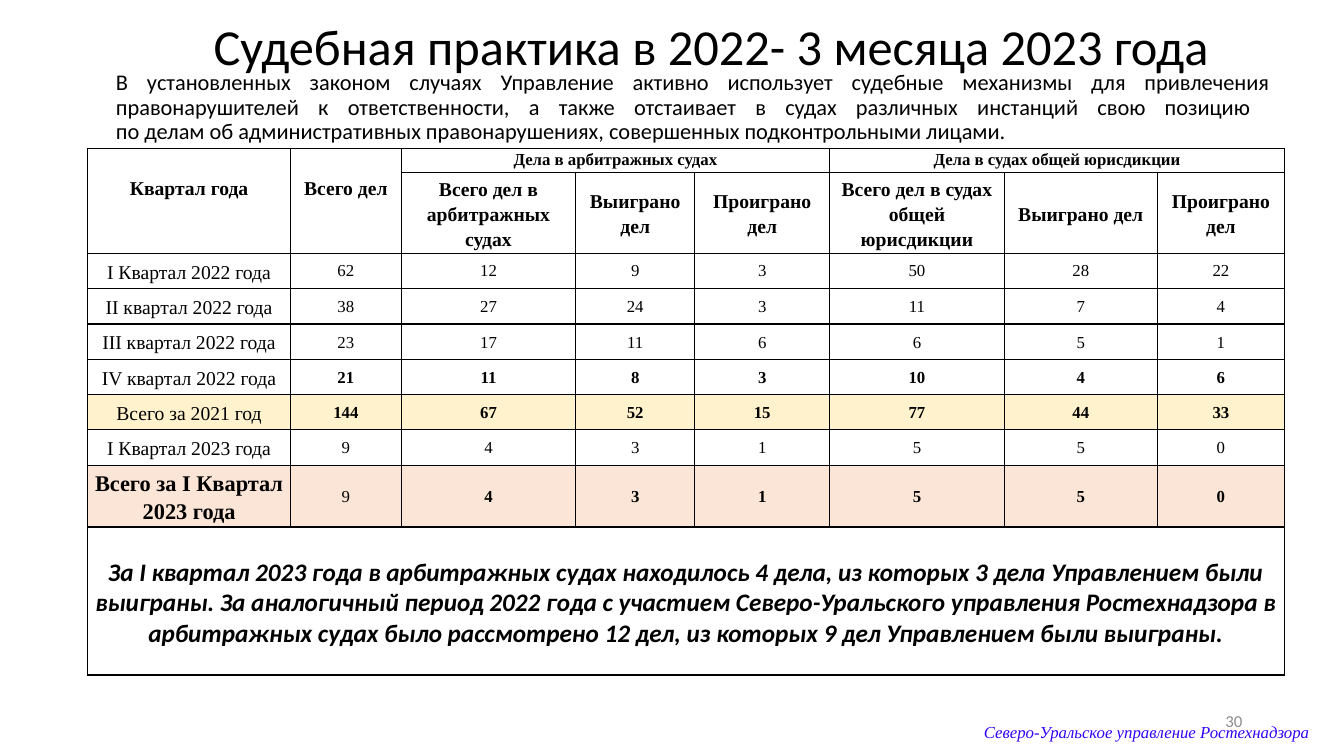
from dataclasses import dataclass

from lxml import etree
from pptx import Presentation
from pptx.dml.color import RGBColor
from pptx.enum.text import MSO_ANCHOR, MSO_AUTO_SIZE, PP_ALIGN
from pptx.oxml.ns import qn
from pptx.util import Inches, Pt

LEFT, CENTER, RIGHT, JUSTIFY = PP_ALIGN.LEFT, PP_ALIGN.CENTER, PP_ALIGN.RIGHT, PP_ALIGN.JUSTIFY
TOP, MIDDLE = MSO_ANCHOR.TOP, MSO_ANCHOR.MIDDLE


@dataclass(frozen=True)
class Theme:
    sans: str = "Calibri"
    serif: str = "Times New Roman"
    ink: str = "000000"
    muted: str = "8C8C8C"
    footer: str = "3103F7"
    year_fill: str = "FFF2CC"
    quarter_fill: str = "FBE5D6"
    title_size: int = 36
    summary_size: int = 18
    body_size: int = 16
    label_size: int = 14
    value_size: int = 12
    border: int = 1


THEME = Theme()

# Content
TITLE = "Судебная практика в 2022- 3 месяца 2023 года"
INTRO = [
    "В установленных законом случаях Управление активно использует судебные механизмы "
    "для привлечения правонарушителей к ответственности, а также отстаивает в судах "
    "различных инстанций свою позицию ",
    "по делам об административных правонарушениях, совершенных подконтрольными лицами.",
]
PAGE_NUMBER = "30"
FOOTER = "Северо-Уральское управление Ростехнадзора"
TALL_HEADERS = ["Квартал года", "Всего дел"]
GROUPS = [
    ("Дела в арбитражных судах",
     ["Всего дел в арбитражных судах", "Выиграно дел", "Проиграно дел"]),
    ("Дела в судах общей юрисдикции",
     ["Всего дел в судах общей юрисдикции", "Выиграно дел", "Проиграно дел"]),
]
# Label, values, number of plain values before the bold ones, line spacing
QUARTERS = [
    ("I Квартал 2022 года", [62, 12, 9, 3, 50, 28, 22], 7, 1.0),
    ("II квартал 2022 года", [38, 27, 24, 3, 11, 7, 4], 7, 1.0),
    ("III квартал 2022 года", [23, 17, 11, 6, 6, 5, 1], 7, 1.15),
    ("IV квартал 2022 года", [21, 11, 8, 3, 10, 4, 6], 0, 1.06),
    ("Всего за 2021 год", [144, 67, 52, 15, 77, 44, 33], 0, 1.06),
    ("I Квартал 2023 года", [9, 4, 3, 1, 5, 5, 0], 7, 1.0),
    ("Всего за I Квартал 2023 года", [9, 4, 3, 1, 5, 5, 0], 1, 1.06),
]
YEAR_TOTAL, QUARTER_TOTAL = 4, 6
SUMMARY = (
    "За I квартал 2023 года в арбитражных судах находилось 4 дела, из которых 3 дела "
    "Управлением были выиграны. За аналогичный период 2022 года с участием "
    "Северо-Уральского управления Ростехнадзора в арбитражных судах было рассмотрено "
    "12 дел, из которых 9 дел Управлением были выиграны."
)

# Geometry: boxes in percent of the slide, table grid in inches
SLIDE_WIDTH, SLIDE_HEIGHT = Inches(13.33), Inches(7.5)
TITLE_BOX = (10.43, 1.73, 85, 9.6)
INTRO_BOX = (7.88, 8.8, 87.4, 12.53)
NUMBER_BOX = (70.67, 92.67, 22.5, 5.33)
FOOTER_BOX = (72.47, 93.47, 26.4, 6.67)
TABLE_BOX = (6.53, 19.6, 89.05, 68.67)
COLUMNS = [2.01, 1.1, 1.73, 1.18, 1.34, 1.73, 1.52, 1.26]
ROWS = [0.24, 0.78] + [0.35] * 6 + [0.56, 1.47]
FIRST_QUARTER_ROW = 2


def place(box):
    left, top, width, height = (share / 100 for share in box)
    return (int(SLIDE_WIDTH * left), int(SLIDE_HEIGHT * top),
            int(SLIDE_WIDTH * width), int(SLIDE_HEIGHT * height))


def write(frame, lines, size, font, color=THEME.ink, align=CENTER, spacing=1.0,
          bold=False, italic=False):
    paragraph = frame.paragraphs[0]
    paragraph.alignment, paragraph.line_spacing = align, spacing
    paragraph.space_before = paragraph.space_after = Pt(0)
    for index, line in enumerate(lines):
        if index:
            paragraph.add_line_break()
        run = paragraph.add_run()
        run.text = line
        run.font.size, run.font.name = Pt(size), font
        run.font.bold, run.font.italic = bold, italic
        run.font.color.rgb = RGBColor.from_string(color)
    return paragraph


def fill_placeholder(shape, box, anchor):
    shape.left, shape.top, shape.width, shape.height = place(box)
    frame = shape.text_frame
    frame.word_wrap, frame.vertical_anchor = True, anchor
    frame.auto_size = MSO_AUTO_SIZE.NONE
    return frame


def add_label(slide, box, text, font, color, align, italic=False):
    frame = slide.shapes.add_textbox(*place(box)).text_frame
    frame.word_wrap, frame.vertical_anchor = True, MIDDLE
    write(frame, [text], THEME.value_size, font, color, align, italic=italic)


def outline(cell):
    properties = cell._tc.get_or_add_tcPr()
    for side in ("lnL", "lnR", "lnT", "lnB"):
        line = etree.SubElement(properties, qn("a:" + side), w=str(Pt(THEME.border)))
        solid = etree.SubElement(line, qn("a:solidFill"))
        etree.SubElement(solid, qn("a:srgbClr"), val=THEME.ink)


def fill_cell(cell, text, size, font=THEME.serif, anchor=MIDDLE, top=0, side=0.05, **style):
    cell.vertical_anchor = anchor
    cell.margin_left = cell.margin_right = Inches(side)
    cell.margin_top = Inches(top)
    write(cell.text_frame, [text], size, font, **style)


def build_table(slide):
    table = slide.shapes.add_table(len(ROWS), len(COLUMNS), *place(TABLE_BOX)).table
    table.first_row = table.horz_banding = False
    for column, width in zip(table.columns, COLUMNS):
        column.width = Inches(width)
    for row, height in zip(table.rows, ROWS):
        row.height = Inches(height)

    # Borders and fills
    fills = {FIRST_QUARTER_ROW + YEAR_TOTAL: THEME.year_fill,
             FIRST_QUARTER_ROW + QUARTER_TOTAL: THEME.quarter_fill}
    for row_index, row in enumerate(table.rows):
        for cell in row.cells:
            outline(cell)
            cell.margin_top = cell.margin_bottom = 0
            if row_index in fills:
                cell.fill.solid()
                cell.fill.fore_color.rgb = RGBColor.from_string(fills[row_index])
            else:
                cell.fill.background()

    # Two header rows
    header = {"bold": True, "spacing": 1.15}
    for column, text in enumerate(TALL_HEADERS):
        cell = table.cell(0, column)
        cell.merge(table.cell(1, column))
        fill_cell(cell, text, THEME.label_size, anchor=TOP, top=0.26, **header)
    column = len(TALL_HEADERS)
    for group, names in GROUPS:
        cell = table.cell(0, column)
        cell.merge(table.cell(0, column + len(names) - 1))
        fill_cell(cell, group, THEME.value_size, anchor=TOP, **header)
        for name in names:
            fill_cell(table.cell(1, column), name, THEME.label_size, **header)
            column += 1

    # Quarters and totals
    for index, (label, values, plain, spacing) in enumerate(QUARTERS):
        row = FIRST_QUARTER_ROW + index
        total = index == QUARTER_TOTAL
        fill_cell(table.cell(row, 0), label, THEME.body_size if total else THEME.label_size,
                  spacing=1.15, bold=total)
        for position, value in enumerate(values):
            fill_cell(table.cell(row, position + 1), str(value), THEME.value_size,
                      side=0.07, spacing=spacing, bold=position >= plain)

    # Summary across the whole width
    last = len(ROWS) - 1
    cell = table.cell(last, 0)
    cell.merge(table.cell(last, len(COLUMNS) - 1))
    fill_cell(cell, SUMMARY, THEME.summary_size, THEME.sans, TOP, top=0.3,
              bold=True, italic=True)


def main():
    presentation = Presentation()
    presentation.slide_width, presentation.slide_height = SLIDE_WIDTH, SLIDE_HEIGHT
    slide = presentation.slides.add_slide(presentation.slide_layouts[1])

    # Title and introduction
    title, body = slide.placeholders
    write(fill_placeholder(title, TITLE_BOX, MIDDLE), [TITLE], THEME.title_size,
          THEME.sans, spacing=0.9)
    paragraph = write(fill_placeholder(body, INTRO_BOX, TOP), INTRO, THEME.body_size,
                      THEME.sans, align=JUSTIFY, spacing=0.9)
    properties = paragraph._p.get_or_add_pPr()
    properties.set("marL", "0")
    properties.set("indent", "0")
    etree.SubElement(properties, qn("a:buNone"))

    # Page number, footer and table
    add_label(slide, NUMBER_BOX, PAGE_NUMBER, THEME.sans, THEME.muted, RIGHT)
    add_label(slide, FOOTER_BOX, FOOTER, THEME.serif, THEME.footer, LEFT, italic=True)
    build_table(slide)
    presentation.save("out.pptx")


if __name__ == "__main__":
    main()
